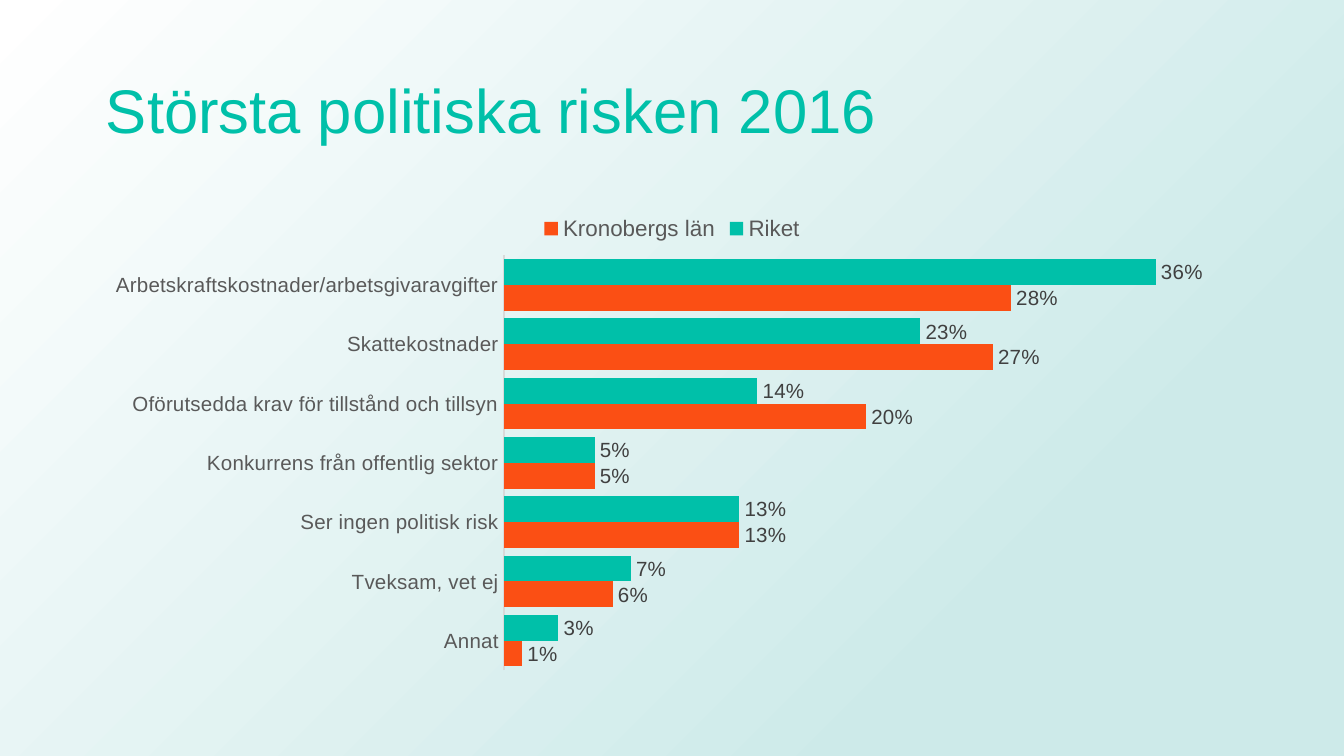
from pptx import Presentation
from pptx import util as u
from pptx.chart.data import CategoryChartData
from pptx.dml.color import RGBColor
from pptx.enum import chart as ch, shapes, text
from pptx.oxml import parse_xml
from pptx.oxml.ns import nsdecls

TITLE = "Största politiska risken 2016"
CATS = [
    "Arbetskraftskostnader/arbetsgivaravgifter",
    "Skattekostnader",
    "Oförutsedda krav för tillstånd och tillsyn",
    "Konkurrens från offentlig sektor",
    "Ser ingen politisk risk",
    "Tveksam, vet ej",
    "Annat",
]
SERIES = [  # name, colour, values
    ("Riket", "teal", (0.36, 0.23, 0.14, 0.05, 0.13, 0.07, 0.03)),
    ("Kronobergs län", "orange", (0.28, 0.27, 0.20, 0.05, 0.13, 0.06, 0.01)),
]
COLORS = {"teal": "00C0A9", "orange": "FB4F14", "mist": "CDEAE9", "white": "FFFFFF",
          "gray": "595959", "dark": "404040", "line": "D9D9D9"}
FONT = "Arial"
WIDE = 10
HIGH = WIDE * 9 / 16
EDGE = 0.69
BODY = WIDE - 2 * EDGE


def rgb(key):
    return RGBColor.from_string(COLORS[key])


def style(font, size, key):
    font.name, font.size, font.bold = FONT, u.Pt(size), False
    font.color.rgb = rgb(key)


def glow(shape):
    """Fill a shape with a gradient that spreads from its lower right corner."""
    stops = "".join(
        f'<a:gs pos="{pos * 1000}"><a:srgbClr val="{COLORS[key]}"/></a:gs>'
        for pos, key in ((23, "mist"), (100, "white")))
    grad = parse_xml(
        f'<a:gradFill {nsdecls("a")} rotWithShape="1"><a:gsLst>{stops}</a:gsLst>'
        '<a:path path="circle"><a:fillToRect l="100000" t="100000"/></a:path>'
        '<a:tileRect r="-100000" b="-100000"/></a:gradFill>')
    shape.fill.background()
    old = shape.element.spPr.find("{*}noFill")
    old.getparent().replace(old, grad)


def add_back(slide):
    back = slide.shapes.add_shape(
        shapes.MSO_SHAPE.RECTANGLE, 0, 0, u.Inches(WIDE), u.Inches(HIGH))
    back.shadow.inherit = False
    back.line.fill.background()
    glow(back)


def add_title(slide):
    box = slide.shapes.add_textbox(*map(u.Inches, (EDGE, 0.3, BODY, 1.09)))
    frame = box.text_frame
    frame.word_wrap = True
    frame.vertical_anchor = text.MSO_ANCHOR.MIDDLE
    frame.text = TITLE
    para = frame.paragraphs[0]
    para.line_spacing = 0.9
    style(para.runs[0].font, 33, "teal")


def add_bars(slide):
    data = CategoryChartData(number_format="0%")
    data.categories = CATS
    for name, _, vals in SERIES:
        data.add_series(name, vals)
    chart = slide.shapes.add_chart(
        ch.XL_CHART_TYPE.BAR_CLUSTERED,
        *map(u.Inches, (EDGE, 1.5, BODY, 3.56)), data).chart
    chart.has_title = False
    style(chart.font, 11, "gray")

    chart.has_legend = True
    chart.legend.position = ch.XL_LEGEND_POSITION.TOP
    chart.legend.include_in_layout = False
    style(chart.legend.font, 12, "gray")

    cat, val = chart.category_axis, chart.value_axis
    cat.reverse_order = True
    cat.major_tick_mark = ch.XL_TICK_MARK.NONE
    cat.format.line.color.rgb = rgb("line")
    cat.format.line.width = u.Pt(0.75)
    style(cat.tick_labels.font, 11, "gray")
    val.visible = False
    val.has_major_gridlines = False
    val.minimum_scale, val.maximum_scale = 0, 0.4
    val.tick_labels.number_format = "0%"
    val.tick_labels.number_format_is_linked = False

    plot = chart.plots[0]
    plot.gap_width, plot.overlap = 30, 0
    plot.vary_by_categories = False
    for bars, (_, key, _) in zip(plot.series, SERIES):
        bars.invert_if_negative = False
        bars.format.fill.solid()
        bars.format.fill.fore_color.rgb = rgb(key)
        tags = bars.data_labels
        tags.show_value = True
        tags.number_format, tags.number_format_is_linked = "0%", False
        tags.position = ch.XL_LABEL_POSITION.OUTSIDE_END
        style(tags.font, 11, "dark")


def main():
    prs = Presentation()
    prs.slide_width, prs.slide_height = u.Inches(WIDE), u.Inches(HIGH)
    slide = prs.slides.add_slide(prs.slide_layouts[6])
    add_back(slide)
    add_title(slide)
    add_bars(slide)
    prs.save("out.pptx")


if __name__ == "__main__":
    main()
